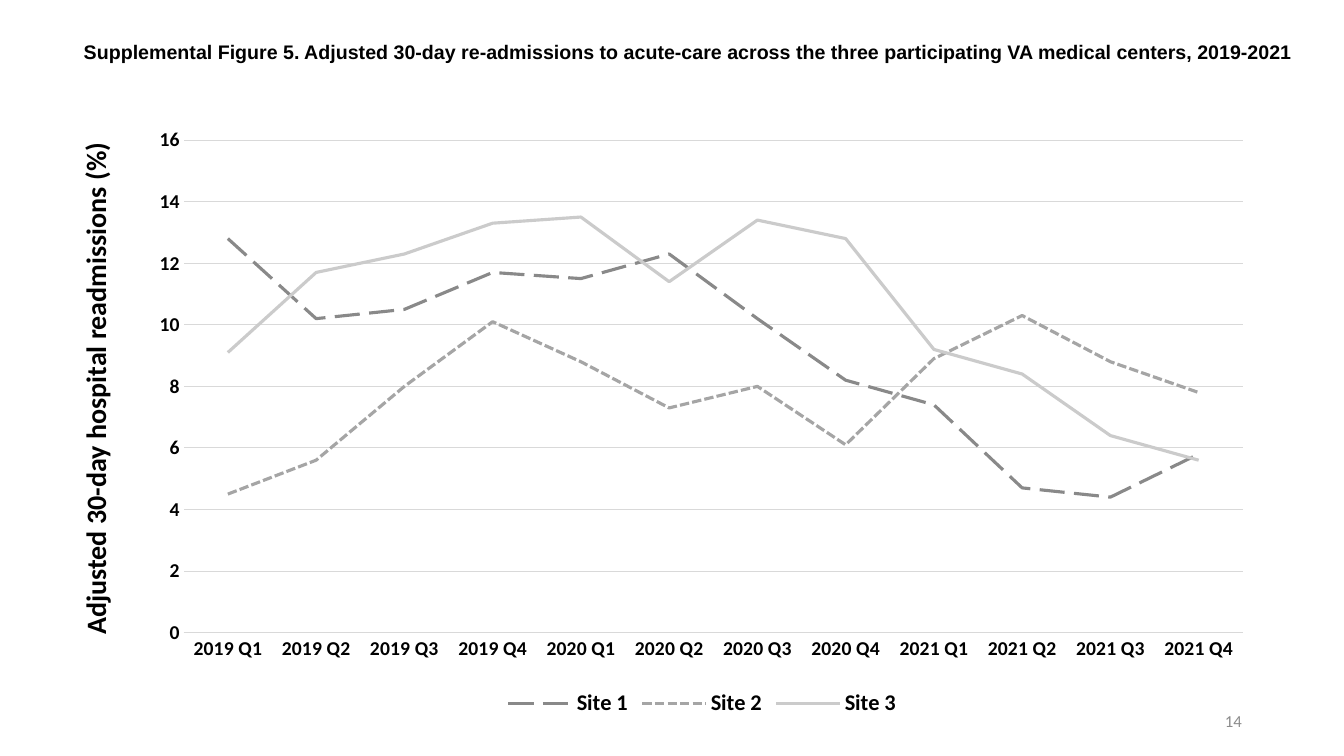
from pptx import Presentation
from pptx.chart.data import CategoryChartData
from pptx.dml.color import RGBColor
from pptx.enum.chart import XL_CHART_TYPE, XL_LEGEND_POSITION, XL_TICK_MARK
from pptx.enum.dml import MSO_LINE
from pptx.enum.text import MSO_ANCHOR, MSO_AUTO_SIZE, PP_ALIGN
from pptx.oxml import parse_xml
from pptx.oxml.ns import nsdecls, qn
from pptx.util import Pt

BLACK = RGBColor(0x00, 0x00, 0x00)
GRID = RGBColor(0xD9, 0xD9, 0xD9)
MUTED = RGBColor(0x8C, 0x8C, 0x8C)
DARK = RGBColor(0x89, 0x89, 0x89)
MID = RGBColor(0xA5, 0xA5, 0xA5)
LIGHT = RGBColor(0xCB, 0xCB, 0xCB)

TITLE = ("Supplemental Figure 5. Adjusted 30-day re-admissions to acute-care "
         "across the three participating VA medical centers, 2019-2021")
QUARTERS = [f"{year} Q{part}" for year in range(2019, 2022) for part in range(1, 5)]
SITES = [
    ("Site 1", DARK, MSO_LINE.LONG_DASH,
     [12.8, 10.2, 10.5, 11.7, 11.5, 12.3, 10.2, 8.2, 7.4, 4.7, 4.4, 5.8]),
    ("Site 2", MID, MSO_LINE.SQUARE_DOT,
     [4.5, 5.6, 8, 10.1, 8.8, 7.3, 8, 6.1, 8.9, 10.3, 8.8, 7.8]),
    ("Site 3", LIGHT, None,
     [9.1, 11.7, 12.3, 13.3, 13.5, 11.4, 13.4, 12.8, 9.2, 8.4, 6.4, 5.6]),
]
PLOT = {"x": 0.038, "y": 0.032, "w": 0.944, "h": 0.82}


def style(font, size, color=BLACK, bold=True, face="Calibri"):
    font.name, font.size, font.bold = face, Pt(size), bold
    font.color.rgb = color


def write(shape, text, size, align=PP_ALIGN.LEFT, anchor=MSO_ANCHOR.TOP, **look):
    """Fill a shape with one formatted paragraph."""
    frame = shape.text_frame
    frame.word_wrap = True
    frame.auto_size = MSO_AUTO_SIZE.NONE
    frame.vertical_anchor = anchor
    para = frame.paragraphs[0]
    para.alignment = align
    run = para.add_run()
    run.text = text
    style(run.font, size, **look)


def rule(line, color, width):
    line.color.rgb = color
    line.width = Pt(width)


class Page:
    def __init__(self, deck):
        self.slide = deck.slides.add_slide(deck.slide_layouts[5])

    def title(self, box, text, size, **look):
        shape = self.slide.shapes.title
        shape.left, shape.top, shape.width, shape.height = map(Pt, box)
        write(shape, text, size, **look)

    def text(self, box, text, size, turn=0, **look):
        shape = self.slide.shapes.add_textbox(*map(Pt, box))
        shape.rotation = turn
        write(shape, text, size, **look)

    def chart(self, box):
        data = CategoryChartData()
        data.categories = QUARTERS
        for name, _, _, rates in SITES:
            data.add_series(name, rates)
        chart = self.slide.shapes.add_chart(
            XL_CHART_TYPE.LINE, *map(Pt, box), data).chart
        style(chart.font, 10, bold=False)
        chart.has_title = False
        chart.has_legend = True
        chart.legend.position = XL_LEGEND_POSITION.BOTTOM
        chart.legend.include_in_layout = False
        style(chart.legend.font, 16)
        chart.plots[0].vary_by_categories = False
        for line, (_, color, dash, _) in zip(chart.plots[0].series, SITES):
            line.smooth = False
            rule(line.format.line, color, 2.25)
            if dash:
                line.format.line.dash_style = dash
        self.axes(chart)
        self.place(chart)

    def axes(self, chart):
        for axis in (chart.category_axis, chart.value_axis):
            axis.major_tick_mark = axis.minor_tick_mark = XL_TICK_MARK.NONE
            style(axis.tick_labels.font, 14)
        rule(chart.category_axis.format.line, GRID, 0.75)
        rates = chart.value_axis
        rates.minimum_scale, rates.maximum_scale, rates.major_unit = 0, 16, 2
        rates.format.line.fill.background()
        rates.has_major_gridlines = True
        rule(rates.major_gridlines.format.line, GRID, 0.75)

    def place(self, chart):
        """Fix the inner plot area as fractions of the chart."""
        area = chart.plots[0]._element.getparent()
        for old in area.findall(qn("c:layout")):
            area.remove(old)
        modes = "".join(f'<c:{key}Mode val="edge"/>' for key in "xy")
        sizes = "".join(f'<c:{key} val="{part}"/>' for key, part in PLOT.items())
        area.insert(0, parse_xml(
            f'<c:layout {nsdecls("c")}><c:manualLayout>'
            f'<c:layoutTarget val="inner"/>{modes}{sizes}'
            '</c:manualLayout></c:layout>'))


def main():
    deck = Presentation()
    deck.slide_width, deck.slide_height = Pt(960), Pt(540)
    page = Page(deck)
    page.chart((100.8, 86.4, 801.4, 429.1))
    page.text((-116.6, 259.9, 369.4, 31.7),
              "Adjusted 30-day hospital readmissions (%)", 20, turn=270)
    page.title((52.6, 25.2, 897.8, 46), TITLE, 14, face="Arial")
    page.text((678.2, 500.4, 216, 28.8), "14", 12, color=MUTED, bold=False,
              align=PP_ALIGN.RIGHT, anchor=MSO_ANCHOR.MIDDLE)
    deck.save("out.pptx")


if __name__ == "__main__":
    main()
